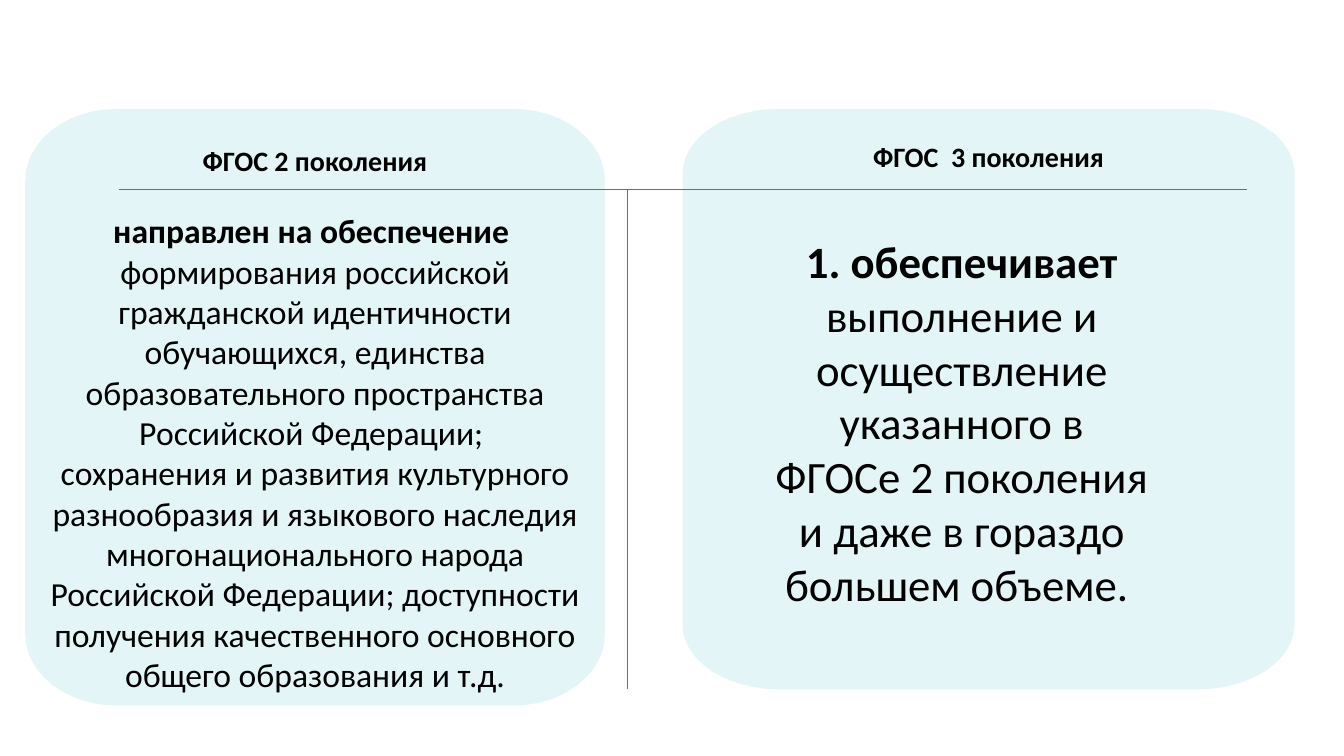
from math import cos, pi, sin

from lxml.etree import SubElement
from pptx import Presentation
from pptx.dml.color import RGBColor
from pptx.enum.shapes import MSO_CONNECTOR
from pptx.enum.text import MSO_ANCHOR, PP_ALIGN
from pptx.oxml.ns import qn
from pptx.util import Inches, Pt

COLORS = {"panel": "0EA9B8", "rule": "4471C4", "text": "000000"}
FONT = "Calibri"
PANEL_OPACITY = 11
CORNER_STEPS = 12

GOALS = [
    ("направлен на обеспечение ", True),
    ("формирования российской гражданской идентичности обучающихся, единства "
     "образовательного пространства Российской Федерации; ", False),
    ("сохранения и развития культурного разнообразия и языкового наследия "
     "многонационального народа Российской Федерации; доступности получения "
     "качественного основного общего образования и т.д.", False),
]
PROMISE = [
    ("1. обеспечивает ", True),
    ("выполнение и осуществление указанного в ФГОСе 2 поколения "
     "и даже в гораздо большем объеме. ", False),
]


def color(name):
    return RGBColor.from_string(COLORS[name])


def add_run(paragraph, text, size, bold):
    paragraph.alignment = PP_ALIGN.CENTER
    run = paragraph.add_run()
    run.text = text
    run.font.name = FONT
    run.font.size = Pt(size)
    run.font.bold = bold
    run.font.color.rgb = color("text")


def rounded_outline(left, top, width, height, radius_x, radius_y):
    """Points of a rectangle with elliptical corners, clockwise from the top left."""
    corners = [
        (left + radius_x, top + radius_y, pi),
        (left + width - radius_x, top + radius_y, 1.5 * pi),
        (left + width - radius_x, top + height - radius_y, 0),
        (left + radius_x, top + height - radius_y, 0.5 * pi),
    ]
    points = []
    for center_x, center_y, start in corners:
        for step in range(CORNER_STEPS + 1):
            angle = start + step / CORNER_STEPS * pi / 2
            points.append((Inches(center_x + radius_x * cos(angle)),
                           Inches(center_y + radius_y * sin(angle))))
    return points


def add_panel(slide, box, radii, heading, heading_offset, statements=()):
    outline = rounded_outline(*box, *radii)
    builder = slide.shapes.build_freeform(*outline[0])
    builder.add_line_segments(outline[1:], close=True)
    panel = builder.convert_to_shape()
    panel.shadow.inherit = False
    panel.line.fill.background()
    panel.fill.solid()
    panel.fill.fore_color.rgb = color("panel")
    tint = panel.fill._xPr.find(qn("a:solidFill"))[0]
    SubElement(tint, qn("a:alpha")).set("val", str(PANEL_OPACITY * 1000))

    frame = panel.text_frame
    frame.word_wrap = True
    frame.vertical_anchor = MSO_ANCHOR.TOP
    frame.margin_left = frame.margin_right = Inches(0.2)
    frame.margin_top = Inches(heading_offset)
    frame.margin_bottom = 0
    add_run(frame.paragraphs[0], heading, 20, True)
    for index, (text, bold) in enumerate(statements):
        paragraph = frame.add_paragraph()
        if index == 0:
            paragraph.space_before = Pt(24)
        add_run(paragraph, text, 24, bold)


def add_rule(slide, x1, y1, x2, y2):
    rule = slide.shapes.add_connector(
        MSO_CONNECTOR.STRAIGHT, Inches(x1), Inches(y1), Inches(x2), Inches(y2))
    rule.line.color.rgb = color("rule")
    rule.line.width = Pt(0.5)
    SubElement(rule._element.spPr, qn("a:effectLst"))


def add_promise(slide, box):
    frame = slide.shapes.add_textbox(*map(Inches, box)).text_frame
    frame.word_wrap = True
    for text, bold in PROMISE:
        add_run(frame.paragraphs[0], text, 32, bold)


def main():
    presentation = Presentation()
    presentation.slide_width = Inches(13.33)
    presentation.slide_height = Inches(7.5)
    slide = presentation.slides.add_slide(presentation.slide_layouts[6])

    top, rule_y, bottom = 1.08, 1.88, 6.84
    add_panel(slide, (6.77, top, 6.07, bottom - top), (0.96, 0.64),
              "ФГОС  3 поколения", 0.3)
    add_rule(slide, 6.22, rule_y, 6.22, bottom)
    add_panel(slide, (0.25, top, 5.75, 5.92), (0.91, 0.71),
              "ФГОС 2 поколения", 0.34, GOALS)
    add_rule(slide, 1.18, rule_y, 12.37, rule_y)
    add_promise(slide, (7.58, 2.27, 3.92, 4.17))
    presentation.save("out.pptx")


if __name__ == "__main__":
    main()
